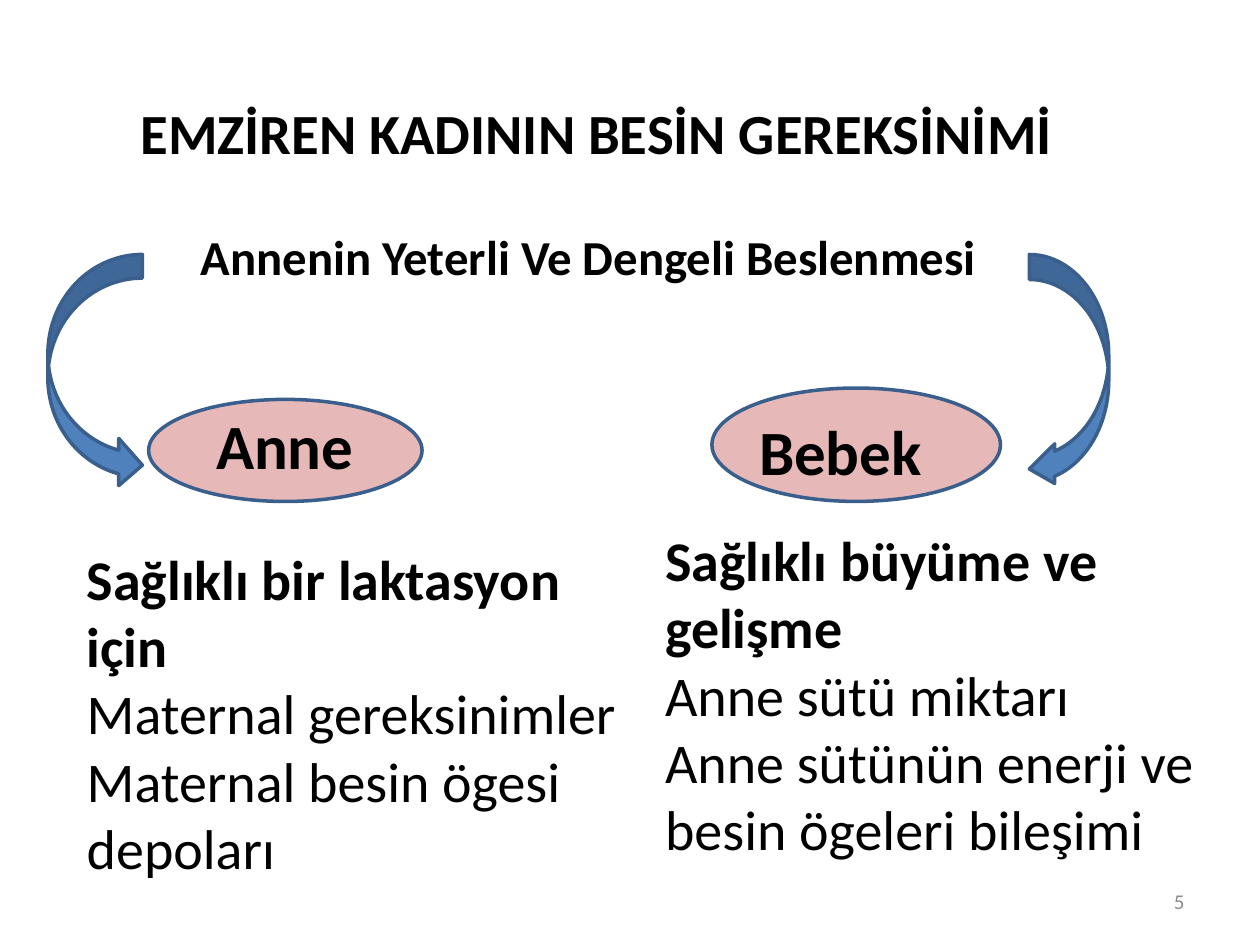
"""Build a slide on the nutritional needs of a breastfeeding woman."""
from dataclasses import dataclass

import pptx
import pptx.dml.color
import pptx.enum.shapes
import pptx.enum.text
import pptx.util

Inches = pptx.util.Inches
Align = pptx.enum.text.PP_ALIGN
Anchor = pptx.enum.text.MSO_ANCHOR
Preset = pptx.enum.shapes.MSO_SHAPE
Box = tuple[float, float, float, float]


@dataclass(frozen=True)
class Theme:
    """Colours, type sizes and font of the slide."""
    font: str = "Calibri"
    ink: str = "000000"
    muted: str = "8C8C8C"
    pink: str = "E6B9B8"
    blue: str = "4F81BD"
    outline: str = "3A5F8C"
    outline_width: float = 2
    title: float = 32.4
    subtitle: float = 27.9
    label: float = 36
    body: float = 32
    number: float = 12


@dataclass(frozen=True)
class Branch:
    """One beneficiary with its arrow, ellipse, label and needs."""
    name: str
    heading: str
    needs: tuple[str, ...]
    arrow: pptx.enum.shapes.MSO_SHAPE
    arrow_box: Box
    arrow_adjustments: tuple[float, ...]
    ellipse_box: Box
    label_box: Box
    needs_box: Box


THEME = Theme()

BRANCHES = (
    Branch("Anne", "Sağlıklı bir laktasyon için",
           ("Maternal gereksinimler", "Maternal besin ögesi depoları"),
           Preset.CURVED_RIGHT_ARROW, (0.38, 2.02, 0.75, 1.86), (0.25, 0.5, 0.25),
           (1.18, 3.17, 2.17, 0.81), (1.4, 3.17, 1.72, 0.71), (0.59, 4.26, 4.43, 2.79)),
    Branch("Bebek", "Sağlıklı büyüme ve gelişme",
           ("Anne sütü miktarı", "Anne sütünün enerji ve besin ögeleri bileşimi"),
           Preset.CURVED_LEFT_ARROW, (8.17, 2.02, 0.63, 1.86), (0.315, 0.5, 0.319),
           (5.65, 3.08, 2.29, 0.9), (5.88, 3.22, 1.58, 0.71), (5.18, 4.11, 4.55, 2.79)),
)


def rgb(value: str) -> pptx.dml.color.RGBColor:
    """Turn a hex string into a colour."""
    return pptx.dml.color.RGBColor.from_string(value)


def inches(box: Box) -> list[int]:
    """Convert left, top, width and height to lengths."""
    return [Inches(length) for length in box]


def write(frame, *lines: str, size: float, bold_lines: int = 0, color: str = THEME.ink,
          align=Align.LEFT, anchor=Anchor.MIDDLE) -> None:
    """Fill a text frame, setting the first bold_lines paragraphs in bold."""
    frame.word_wrap = True
    frame.auto_size = pptx.enum.text.MSO_AUTO_SIZE.NONE
    frame.vertical_anchor = anchor
    frame.text = "\n".join(lines)
    for index, paragraph in enumerate(frame.paragraphs):
        paragraph.alignment = align
        paragraph.font.name = THEME.font
        paragraph.font.size = pptx.util.Pt(size)
        paragraph.font.bold = index < bold_lines
        paragraph.font.color.rgb = rgb(color)


def add_text(slide, box: Box, *lines: str, **text_format) -> None:
    """Add a text box with formatted lines."""
    write(slide.shapes.add_textbox(*inches(box)).text_frame, *lines, **text_format)


def add_outlined(slide, preset, box: Box, fill: str, adjustments: tuple[float, ...] = ()) -> None:
    """Add a filled preset shape with the common outline."""
    figure = slide.shapes.add_shape(preset, *inches(box))
    figure.shadow.inherit = False
    figure.fill.solid()
    figure.fill.fore_color.rgb = rgb(fill)
    figure.line.color.rgb = rgb(THEME.outline)
    figure.line.width = pptx.util.Pt(THEME.outline_width)
    for index, value in enumerate(adjustments):
        figure.adjustments[index] = value


def add_branch(slide, branch: Branch) -> None:
    """Draw a beneficiary and its list of needs."""
    add_outlined(slide, Preset.OVAL, branch.ellipse_box, THEME.pink)
    add_outlined(slide, branch.arrow, branch.arrow_box, THEME.blue, branch.arrow_adjustments)
    add_text(slide, branch.label_box, branch.name, size=THEME.label, bold_lines=1,
             align=Align.CENTER)
    add_text(slide, branch.needs_box, branch.heading, *branch.needs, size=THEME.body,
             bold_lines=1)


def main() -> None:
    """Create and save the presentation."""
    deck = pptx.Presentation()
    deck.slide_width, deck.slide_height = Inches(10), Inches(7.5)
    slide = deck.slides.add_slide(deck.slide_layouts[5])
    title = slide.shapes.title
    title.left, title.top, title.width, title.height = inches((0.37, 0.72, 8.73, 0.65))
    write(title.text_frame, "EMZİREN KADININ BESİN GEREKSİNİMİ", size=THEME.title,
          bold_lines=1, align=Align.CENTER)
    add_text(slide, (1.4, 1.75, 6.54, 0.79), "Annenin Yeterli Ve Dengeli Beslenmesi",
             size=THEME.subtitle, bold_lines=1, align=Align.CENTER, anchor=Anchor.TOP)
    for branch in BRANCHES:
        add_branch(slide, branch)
    add_text(slide, (7.17, 6.95, 2.33, 0.4), "5", size=THEME.number, color=THEME.muted,
             align=Align.RIGHT)
    deck.save("out.pptx")


if __name__ == "__main__":
    main()
